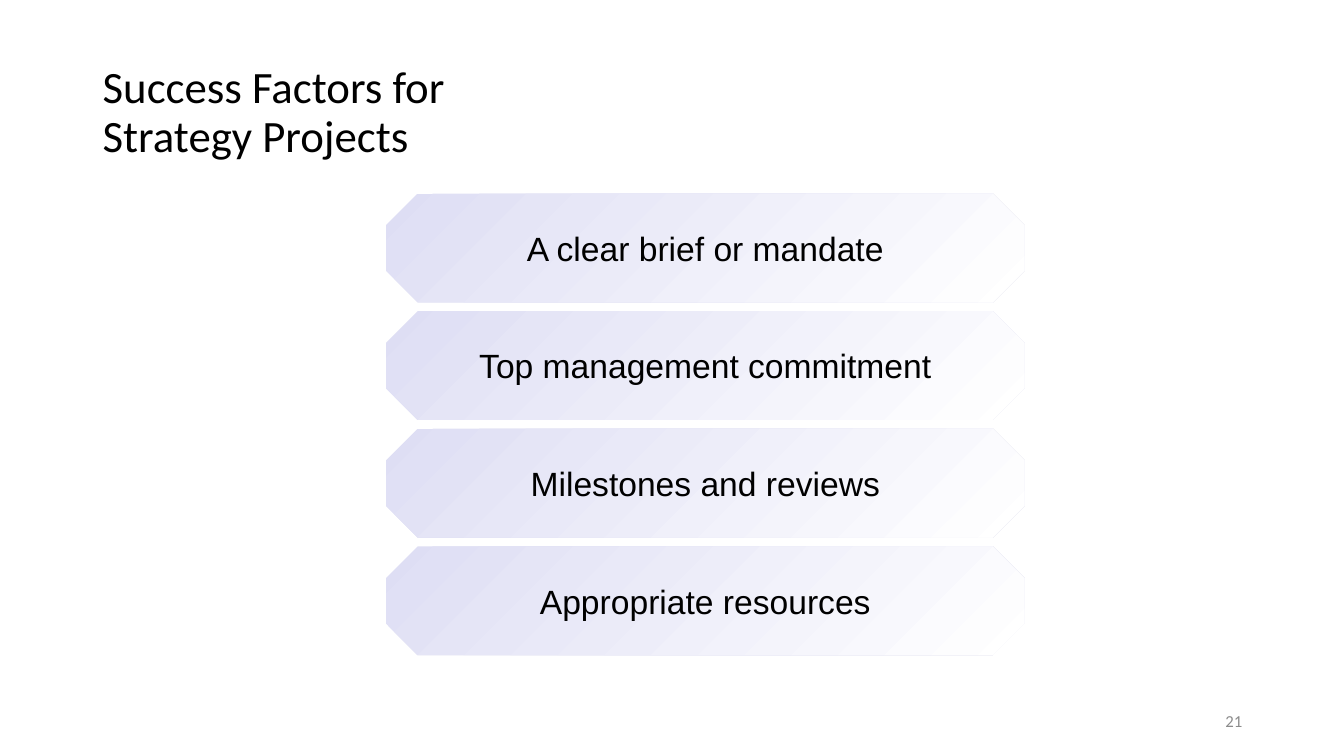
import pptx
from pptx.dml.color import RGBColor
from pptx.enum.shapes import MSO_SHAPE
from pptx.enum.text import MSO_ANCHOR, PP_ALIGN
from pptx.util import Inches, Pt

COLORS = {"text": "000000", "page": "8C8C8C", "lilac": "DEDEF4", "white": "FFFFFF"}
FACTORS = [
    "A clear brief or mandate",
    "Top management commitment",
    "Milestones and reviews",
    "Appropriate resources",
]


def write(shape, text, font, size, color, align):
    """Put one middle-anchored paragraph into a shape and return it."""
    frame = shape.text_frame
    frame.vertical_anchor = MSO_ANCHOR.MIDDLE
    para = frame.paragraphs[0]
    para.text = text
    para.alignment = align
    para.font.name = font
    para.font.size = Pt(size)
    para.font.color.rgb = RGBColor.from_string(COLORS[color])
    return para


deck = pptx.Presentation()
deck.slide_width = Inches(13.33)
deck.slide_height = Inches(7.5)
slide = deck.slides.add_slide(deck.slide_layouts[6])
shapes = slide.shapes

title = shapes.add_textbox(Inches(0.92), Inches(0.4), Inches(11.5), Inches(1.45))
title.text_frame.word_wrap = True
para = write(title, "Success Factors for \vStrategy Projects", "Calibri", 32, "text", PP_ALIGN.LEFT)
para.line_spacing = 0.9

for row, factor in enumerate(FACTORS):
    top = Inches(1.92 + row * 3.5 / 3)
    bar = shapes.add_shape(MSO_SHAPE.OCTAGON, Inches(3.83), top, Inches(6.33), Inches(1.08))
    bar.adjustments[0] = 0.29
    bar.shadow.inherit = False
    bar.line.fill.background()
    bar.fill.gradient()
    bar.fill.gradient_angle = 315
    for stop, name in zip(bar.fill.gradient_stops, ("lilac", "white")):
        stop.color.rgb = RGBColor.from_string(COLORS[name])
    bar.text_frame.word_wrap = False
    write(bar, factor, "Arial", 24, "text", PP_ALIGN.CENTER)

page = shapes.add_textbox(Inches(9.42), Inches(6.95), Inches(3), Inches(0.4))
page.text_frame.word_wrap = True
write(page, "21", "Calibri", 12, "page", PP_ALIGN.RIGHT)

deck.save("out.pptx")
